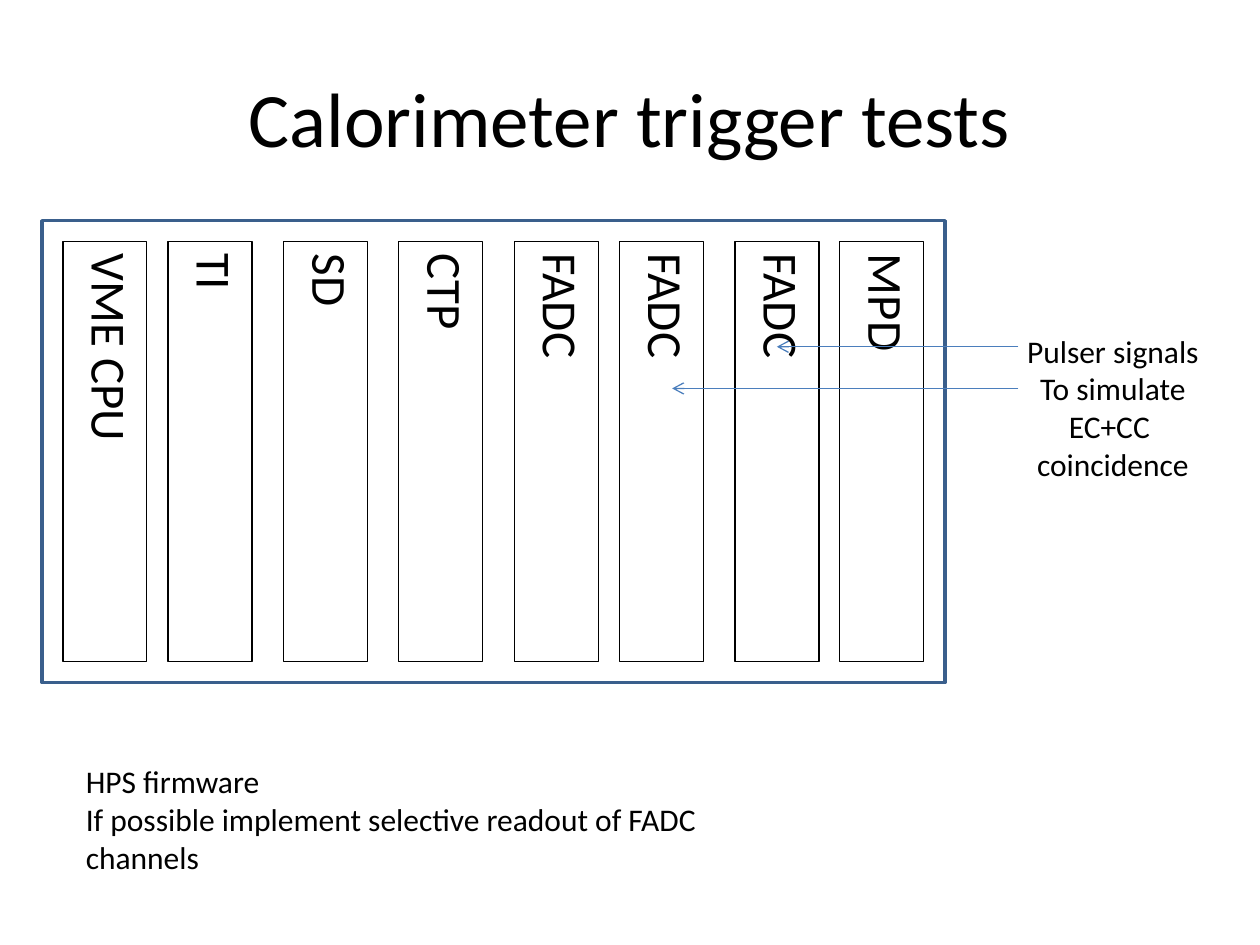
from lxml.etree import SubElement
from pptx import Presentation
from pptx.dml.color import RGBColor
from pptx.enum.shapes import MSO_CONNECTOR, MSO_SHAPE
from pptx.enum.text import MSO_ANCHOR, PP_ALIGN
from pptx.oxml.ns import qn
from pptx.util import Cm, Pt

BLACK = RGBColor(0x00, 0x00, 0x00)
CRATE_BLUE = RGBColor(0x3A, 0x5F, 0x8C)
ARROW_BLUE = RGBColor(0x4B, 0x7E, 0xBC)

# Crate modules: name and left edge in cm
MODULES = [
    ("VME CPU", 1.27), ("TI", 3.39), ("SD", 5.72), ("CTP", 8.04),
    ("FADC", 10.37), ("FADC", 12.49), ("FADC", 14.82), ("MPD", 16.93),
]
MODULE_TOP, MODULE_WIDTH, MODULE_HEIGHT = 4.87, 1.69, 8.47

# Pulser arrows: tip and height in cm
ARROW_START = 20.53
ARROWS = [(15.66, 6.99), (13.55, 7.83)]


class SlideBuilder:
    font_name = "Calibri"

    def __init__(self, slide):
        self.slide = slide

    def add_lines(self, frame, lines, size, alignment):
        frame.word_wrap = True
        for index, line in enumerate(lines):
            paragraph = frame.paragraphs[0] if index == 0 else frame.add_paragraph()
            paragraph.alignment = alignment
            run = paragraph.add_run()
            run.text = line
            run.font.name = self.font_name
            run.font.size = Pt(size)
            run.font.color.rgb = BLACK

    def text(self, left, top, width, height, lines, size=18,
             alignment=PP_ALIGN.LEFT, anchor=MSO_ANCHOR.TOP):
        box = self.slide.shapes.add_textbox(Cm(left), Cm(top), Cm(width), Cm(height))
        box.text_frame.vertical_anchor = anchor
        self.add_lines(box.text_frame, lines, size, alignment)

    def rectangle(self, left, top, width, height, color, line_width):
        shape = self.slide.shapes.add_shape(
            MSO_SHAPE.RECTANGLE, Cm(left), Cm(top), Cm(width), Cm(height))
        shape.shadow.inherit = False
        shape.fill.background()
        shape.line.color.rgb = color
        shape.line.width = Pt(line_width)
        return shape

    def module(self, name, left):
        shape = self.rectangle(left, MODULE_TOP, MODULE_WIDTH, MODULE_HEIGHT, BLACK, 0.75)
        frame = shape.text_frame
        frame.vertical_anchor = MSO_ANCHOR.TOP
        self.add_lines(frame, [name], 28, PP_ALIGN.LEFT)
        shape.element.txBody.find(qn("a:bodyPr")).set("vert", "eaVert")

    def arrow(self, start, end, height):
        connector = self.slide.shapes.add_connector(
            MSO_CONNECTOR.STRAIGHT, Cm(start), Cm(height), Cm(end), Cm(height))
        connector.line.color.rgb = ARROW_BLUE
        connector.line.width = Pt(0.75)
        properties = connector.element.spPr
        SubElement(properties.find(qn("a:ln")), qn("a:tailEnd"), type="arrow")
        SubElement(properties, qn("a:effectLst"))


def main():
    presentation = Presentation()
    presentation.slide_width = Cm(25.4)
    presentation.slide_height = Cm(19.05)
    builder = SlideBuilder(presentation.slides.add_slide(presentation.slide_layouts[6]))

    # Title
    builder.text(1.27, 0.76, 22.86, 3.18, ["Calorimeter trigger tests"], 44,
                 PP_ALIGN.CENTER, MSO_ANCHOR.MIDDLE)

    # Crate with its modules
    builder.rectangle(0.85, 4.45, 18.2, 9.31, CRATE_BLUE, 2)
    for name, left in MODULES:
        builder.module(name, left)

    # Pulser signals
    for tip, height in ARROWS:
        builder.arrow(ARROW_START, tip, height)
    builder.text(20.32, 6.56, 4.23, 3.33,
                 ["Pulser signals", "To simulate", "EC+CC ", "coincidence"],
                 alignment=PP_ALIGN.CENTER)

    # Firmware notes
    builder.text(1.48, 15.24, 14.6, 2.56,
                 ["HPS firmware",
                  "If possible implement selective readout of FADC channels"])

    presentation.save("out.pptx")


if __name__ == "__main__":
    main()
